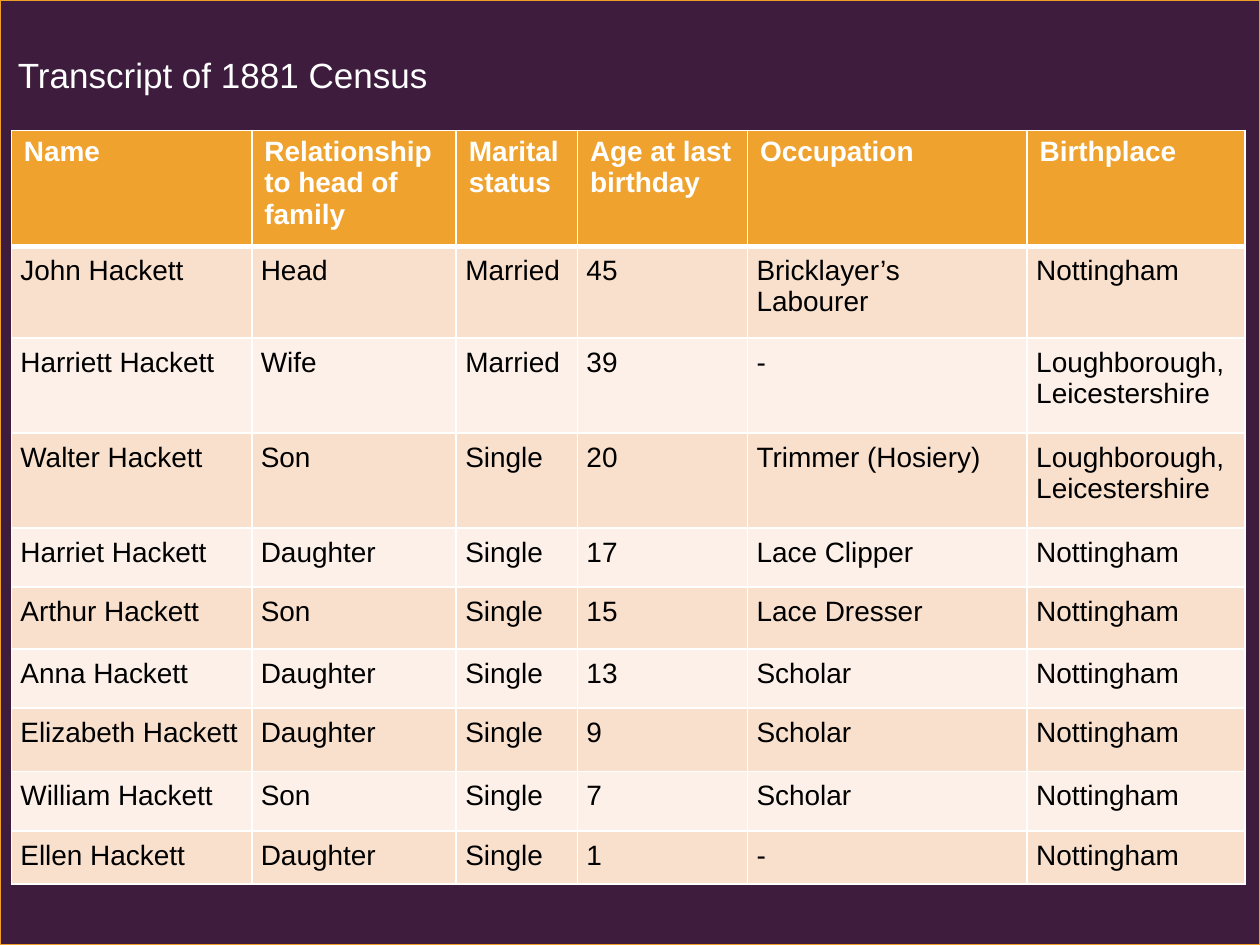
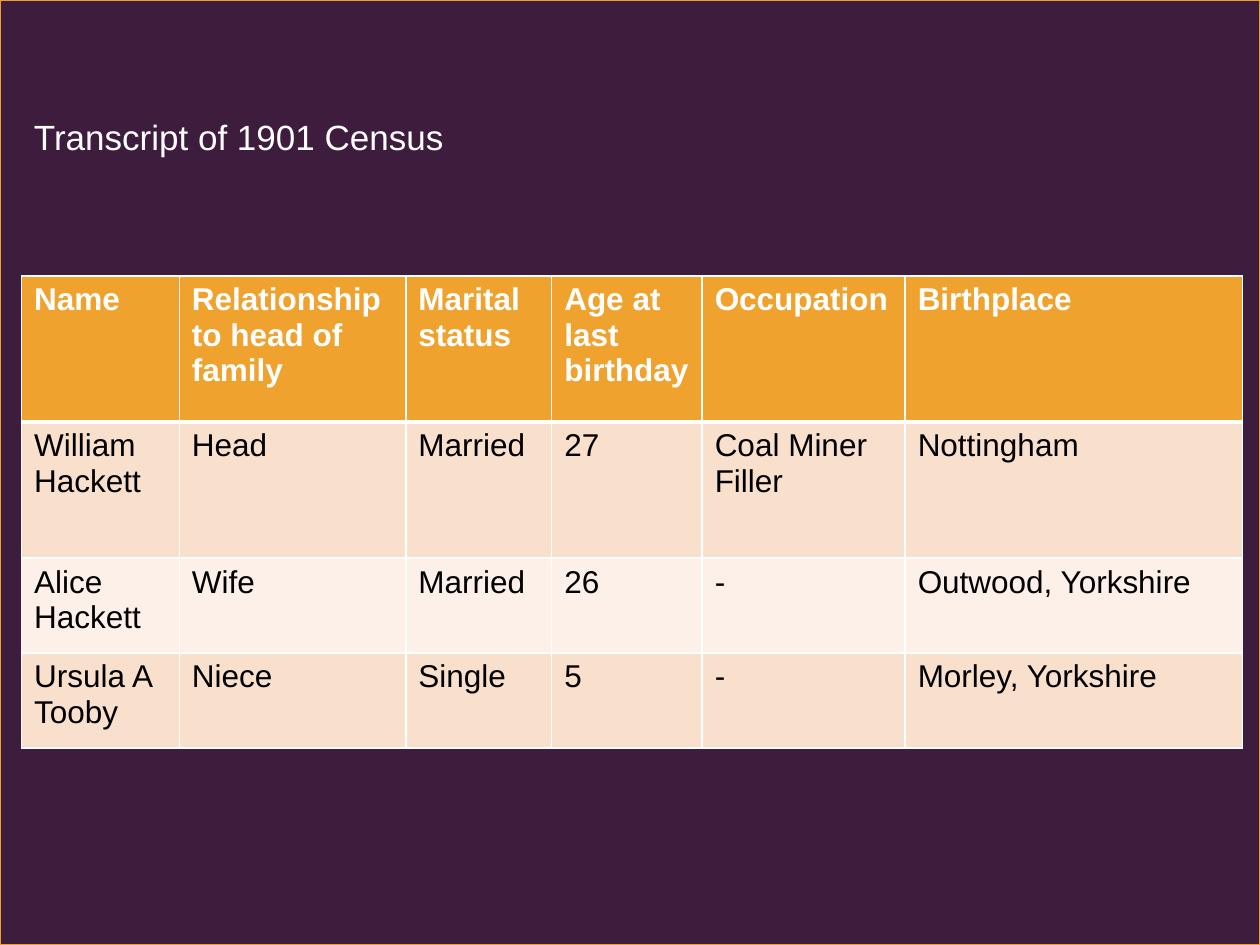
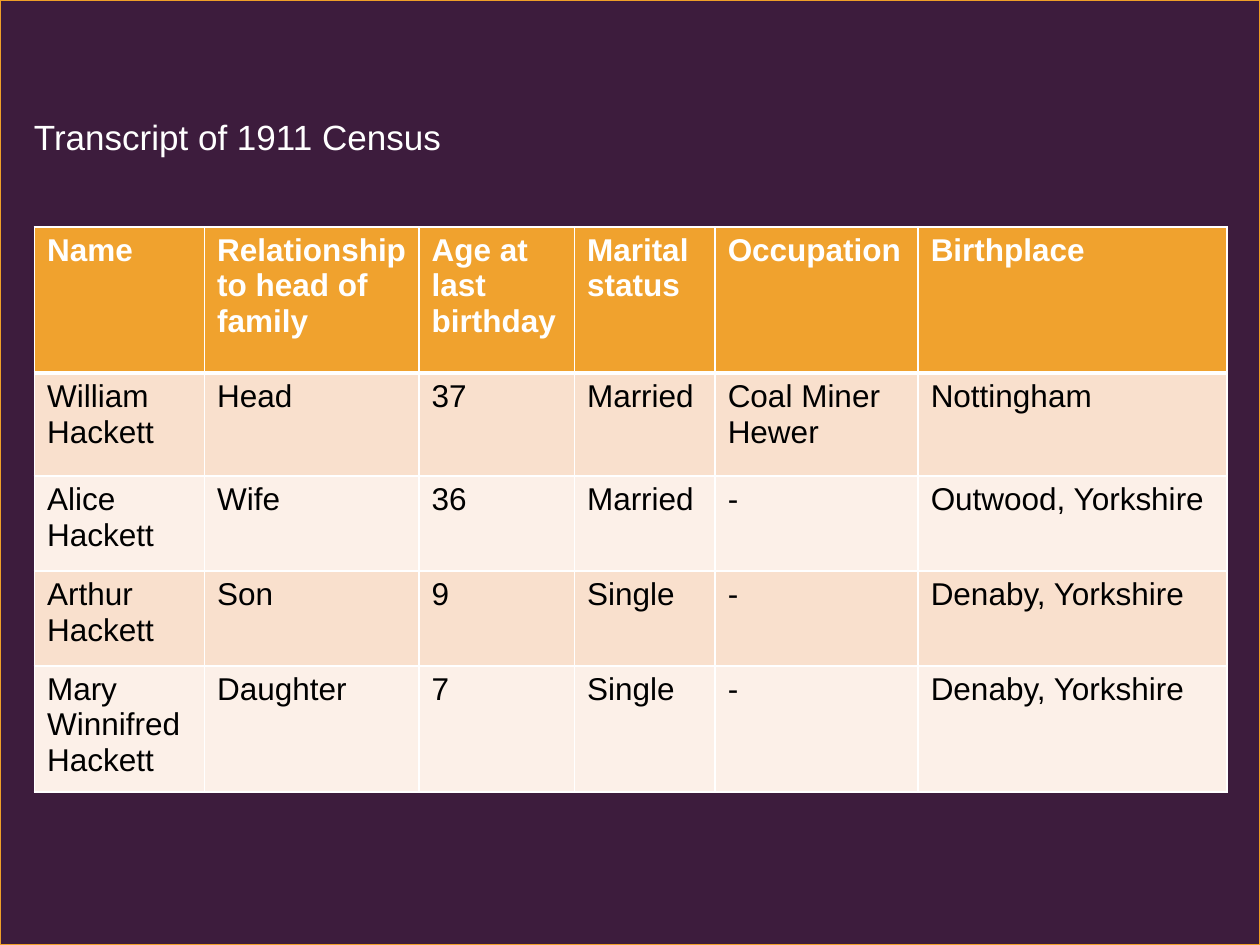
from dataclasses import dataclass

from lxml import etree
from pptx import Presentation
from pptx.dml.color import RGBColor
from pptx.enum.shapes import MSO_SHAPE
from pptx.enum.text import MSO_ANCHOR, MSO_AUTO_SIZE, PP_ALIGN
from pptx.oxml.ns import qn
from pptx.util import Pt

RECTANGLE = MSO_SHAPE.RECTANGLE
TOP = MSO_ANCHOR.TOP
LEFT = PP_ALIGN.LEFT
NO_AUTOFIT = MSO_AUTO_SIZE.NONE

# Shared style
SLIDE_WIDTH, SLIDE_HEIGHT = 720, 540
FONT = "Arial"
PLUM, GOLD_EDGE, GOLD = "3D1C3D", "EF9F28", "F0A22E"
BANDS = ("F9E0CD", "FCF0E8")
WHITE, BLACK = "FFFFFF", "000000"
TITLE_WIDTH, TITLE_HEIGHT = 256, 98
TITLE_INSETS = (7.2, 24, 7.2, 6)
CELL_INSETS = (7.2, 3.6, 7.2, 3.6)
TIGHT_INSETS = (5.2, 5.2, 5.2, 5.2)
RULE, HEADER_RULE = 1, 3

# Column headings
NAME, RELATION, MARITAL = "Name", "Relationship to head of family", "Marital status"
AGE, OCCUPATION, BIRTHPLACE = "Age at last birthday", "Occupation", "Birthplace"


@dataclass(frozen=True)
class Census:
    year: int
    title_at: tuple[float, float]
    table_at: tuple[float, float]
    text_size: float
    body_insets: tuple[float, float, float, float]
    columns: dict[str, float]
    row_heights: list[float]
    people: list[tuple[str, ...]]


CENSUSES = [
    Census(
        1881, (3, 6.5), (6.5, 74.5), 16, TIGHT_INSETS,
        {NAME: 137.4, RELATION: 116.8, MARITAL: 69.3, AGE: 97.2,
         OCCUPATION: 159.8, BIRTHPLACE: 124.6},
        [66.2, 52.6, 54.2, 54.2, 33.8, 35.3, 33.8, 36.4, 34, 30.2],
        [
            ("John Hackett", "Head", "Married", "45", "Bricklayer’s Labourer", "Nottingham"),
            ("Harriett Hackett", "Wife", "Married", "39", "-", "Loughborough, Leicestershire"),
            ("Walter Hackett", "Son", "Single", "20", "Trimmer (Hosiery)",
             "Loughborough, Leicestershire"),
            ("Harriet Hackett", "Daughter", "Single", "17", "Lace Clipper", "Nottingham"),
            ("Arthur Hackett", "Son", "Single", "15", "Lace Dresser", "Nottingham"),
            ("Anna Hackett", "Daughter", "Single", "13", "Scholar", "Nottingham"),
            ("Elizabeth Hackett", "Daughter", "Single", "9", "Scholar", "Nottingham"),
            ("William Hackett", "Son", "Single", "7", "Scholar", "Nottingham"),
            ("Ellen Hackett", "Daughter", "Single", "1", "-", "Nottingham"),
        ],
    ),
    Census(
        1901, (12.2, 42), (12.3, 157.7), 18, CELL_INSETS,
        {NAME: 90.2, RELATION: 129.4, MARITAL: 83.4, AGE: 86,
         OCCUPATION: 116, BIRTHPLACE: 192.7},
        [83.5, 77.8, 54.2, 54.2],
        [
            ("William Hackett", "Head", "Married", "27", "Coal Miner Filler", "Nottingham"),
            ("Alice Hackett", "Wife", "Married", "26", "-", "Outwood, Yorkshire"),
            ("Ursula A Tooby", "Niece", "Single", "5", "-", "Morley, Yorkshire"),
        ],
    ),
    Census(
        1911, (12.2, 42), (19.7, 129.6), 18, CELL_INSETS,
        {NAME: 97.2, RELATION: 122.6, AGE: 88.8, MARITAL: 80.4,
         OCCUPATION: 116, BIRTHPLACE: 176.6},
        [83.5, 59, 54.2, 54.2, 72.2],
        [
            ("William Hackett", "Head", "37", "Married", "Coal Miner Hewer", "Nottingham"),
            ("Alice Hackett", "Wife", "36", "Married", "-", "Outwood, Yorkshire"),
            ("Arthur Hackett", "Son", "9", "Single", "-", "Denaby, Yorkshire"),
            ("Mary Winnifred Hackett", "Daughter", "7", "Single", "-", "Denaby, Yorkshire"),
        ],
    ),
]


def paint(color_format, color: str) -> None:
    """Give a solid fill the colour of a hex string."""
    color_format.solid()
    color_format.fore_color.rgb = RGBColor.from_string(color)


def write_text(frame, text: str, *, size: float, color: str, bold: bool = False) -> None:
    frame.text = text
    paragraph = frame.paragraphs[0]
    paragraph.alignment = LEFT
    font = paragraph.runs[0].font
    font.name, font.size, font.bold = FONT, Pt(size), bold
    paint(font.fill, color)


def set_insets(holder, insets: tuple[float, float, float, float]) -> None:
    """Set the margins of a text frame or a cell: left, top, right, bottom."""
    for side, inset in zip(("left", "top", "right", "bottom"), insets):
        setattr(holder, f"margin_{side}", Pt(inset))


def add_borders(cell, top: float, bottom: float) -> None:
    properties = cell._tc.get_or_add_tcPr()
    for side, width in (("L", RULE), ("R", RULE), ("T", top), ("B", bottom)):
        line = etree.SubElement(properties, qn(f"a:ln{side}"), w=str(Pt(width)))
        fill = etree.SubElement(line, qn("a:solidFill"))
        etree.SubElement(fill, qn("a:srgbClr"), val=WHITE)


def add_backdrop(slide, layout) -> None:
    """Draw the framed plum backdrop and move it behind everything on the layout."""
    backdrop = slide.shapes.add_shape(RECTANGLE, 0, 0, Pt(SLIDE_WIDTH), Pt(SLIDE_HEIGHT))
    backdrop.shadow.inherit = False
    paint(backdrop.fill, PLUM)
    paint(backdrop.line.fill, GOLD_EDGE)
    backdrop.line.width = Pt(0.75)
    layout.shapes.element.insert(2, backdrop.element)


def place_title(slide, census: Census) -> None:
    title = slide.shapes.title
    title.left, title.top = map(Pt, census.title_at)
    title.width, title.height = Pt(TITLE_WIDTH), Pt(TITLE_HEIGHT)
    frame = title.text_frame
    frame.word_wrap = True
    frame.auto_size = NO_AUTOFIT
    frame.vertical_anchor = TOP
    set_insets(frame, TITLE_INSETS)
    write_text(frame, f"Transcript of {census.year} Census", size=20, color=WHITE)


def add_census_table(slide, census: Census) -> None:
    rows = [tuple(census.columns), *census.people]
    widths = list(census.columns.values())
    left, top = census.table_at
    table = slide.shapes.add_table(
        len(rows), len(widths), Pt(left), Pt(top),
        Pt(sum(widths)), Pt(sum(census.row_heights)),
    ).table
    table.horz_banding = False
    for column, width in zip(table.columns, widths):
        column.width = Pt(width)
    for index, (entries, height) in enumerate(zip(rows, census.row_heights)):
        table.rows[index].height = Pt(height)
        is_header = index == 0
        for cell, entry in zip(table.rows[index].cells, entries):
            set_insets(cell, CELL_INSETS if is_header else census.body_insets)
            add_borders(cell, top=HEADER_RULE if index == 1 else RULE,
                        bottom=HEADER_RULE if is_header else RULE)
            paint(cell.fill, GOLD if is_header else BANDS[(index - 1) % 2])
            write_text(cell.text_frame, entry, size=census.text_size,
                       color=WHITE if is_header else BLACK, bold=is_header)


def main() -> None:
    presentation = Presentation()
    presentation.slide_width = Pt(SLIDE_WIDTH)
    presentation.slide_height = Pt(SLIDE_HEIGHT)
    title_only = presentation.slide_layouts[5]
    for census in CENSUSES:
        slide = presentation.slides.add_slide(title_only)
        if census is CENSUSES[0]:
            add_backdrop(slide, title_only)
        place_title(slide, census)
        add_census_table(slide, census)
    presentation.save("out.pptx")


if __name__ == "__main__":
    main()
